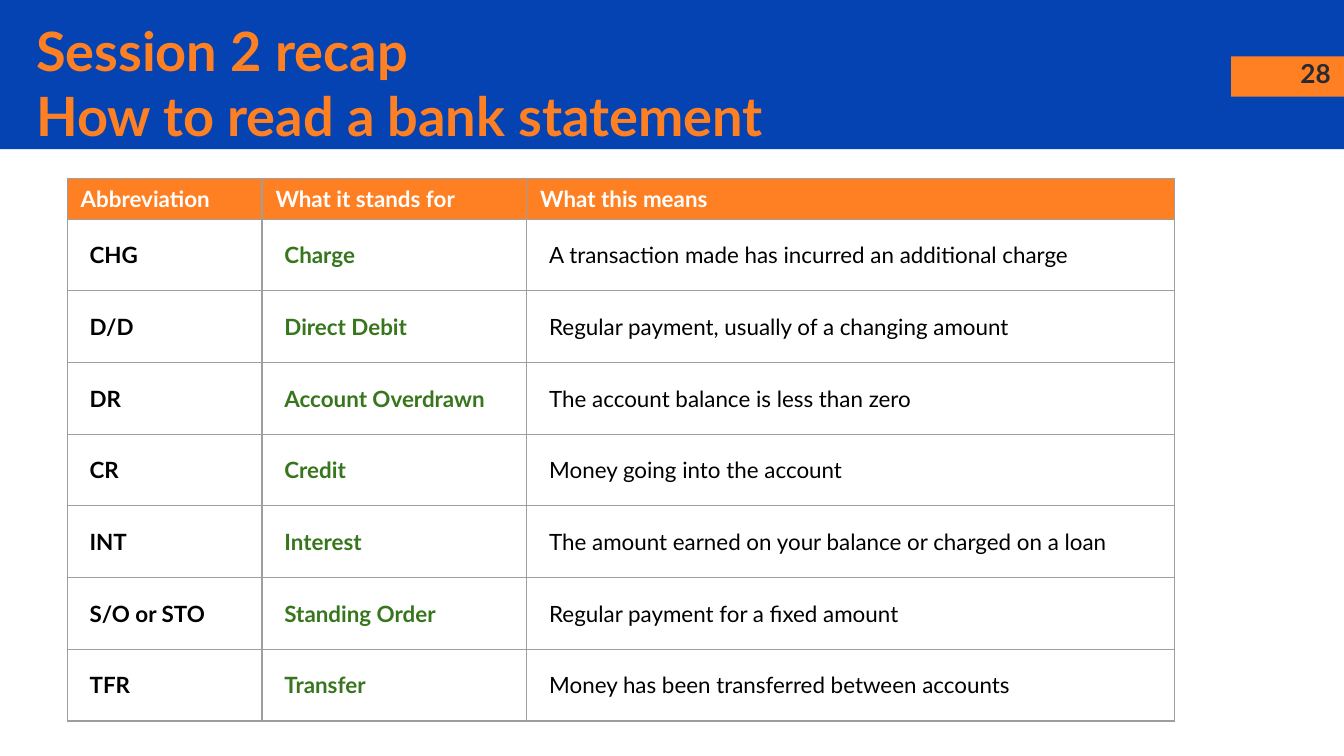
from typing import NamedTuple

from lxml import etree
from pptx import Presentation
from pptx.dml.color import RGBColor
from pptx.enum import shapes, text
from pptx.oxml import ns
from pptx.util import Inches, Pt

FONT = "Lato"
BLUE, ORANGE, GREEN = "0543B3", "FF8022", "38761D"
WHITE, BLACK, DARK, GREY = "FFFFFF", "000000", "262A33", "9E9E9E"


class Term(NamedTuple):
    abbreviation: str
    stands_for: str
    meaning: str


class CellStyle(NamedTuple):
    color: str
    bold: bool
    margins: tuple[float, float]  # horizontal, vertical
    fill: str | None = None


HEADINGS = Term("Abbreviation", "What it stands for", "What this means")
TERMS = [
    Term("CHG", "Charge", "A transaction made has incurred an additional charge"),
    Term("D/D", "Direct Debit", "Regular payment, usually of a changing amount"),
    Term("DR", "Account Overdrawn", "The account balance is less than zero"),
    Term("CR", "Credit", "Money going into the account"),
    Term("INT", "Interest", "The amount earned on your balance or charged on a loan"),
    Term("S/O or STO", "Standing Order", "Regular payment for a fixed amount"),
    Term("TFR", "Transfer", "Money has been transferred between accounts"),
]
COLUMN_WIDTHS = [1.45, 1.97, 4.82]
HEADER_HEIGHT, TERM_HEIGHT = 0.3, 0.53

HEADER_STYLE = CellStyle(WHITE, True, (0.1, 0.05), ORANGE)
TERM_MARGINS = (1 / 6, 1 / 6)
TERM_STYLES = [
    CellStyle(BLACK, True, TERM_MARGINS),
    CellStyle(GREEN, True, TERM_MARGINS),
    CellStyle(BLACK, False, TERM_MARGINS),
]


def rgb(color: str) -> RGBColor:
    return RGBColor.from_string(color)


def style_font(paragraph, size: float, color: str, bold: bool) -> None:
    font = paragraph.font
    font.name, font.size, font.bold = FONT, Pt(size), bold
    font.color.rgb = rgb(color)


def add_band(slide, left: float, top: float, width: float, height: float, color: str) -> None:
    band = slide.shapes.add_shape(
        shapes.MSO_SHAPE.RECTANGLE, Inches(left), Inches(top), Inches(width), Inches(height))
    band.shadow.inherit = False
    band.fill.solid()
    band.fill.fore_color.rgb = rgb(color)
    band.line.fill.background()


def add_text(slide, box: tuple[float, float, float, float], lines: list[str], size: float,
             color: str, align, anchor, vertical_margin: float) -> None:
    frame = slide.shapes.add_textbox(*map(Inches, box)).text_frame
    frame.word_wrap = True
    frame.vertical_anchor = anchor
    frame.margin_left = frame.margin_right = Inches(0.1)
    frame.margin_top = frame.margin_bottom = Inches(vertical_margin)
    frame.text = "\n".join(lines)
    for paragraph in frame.paragraphs:
        paragraph.alignment = align
        style_font(paragraph, size, color, True)


def add_borders(cell) -> None:
    properties = cell._tc.get_or_add_tcPr()
    for position, side in enumerate(("a:lnL", "a:lnR", "a:lnT", "a:lnB")):
        line = etree.Element(ns.qn(side), w=str(Pt(0.75)))
        fill = etree.SubElement(line, ns.qn("a:solidFill"))
        etree.SubElement(fill, ns.qn("a:srgbClr"), val=GREY)
        properties.insert(position, line)


def fill_cell(cell, wording: str, style: CellStyle) -> None:
    horizontal, vertical = map(Inches, style.margins)
    cell.margin_left = cell.margin_right = horizontal
    cell.margin_top = cell.margin_bottom = vertical
    cell.text = wording
    style_font(cell.text_frame.paragraphs[0], 12, style.color, style.bold)
    if style.fill:
        cell.fill.solid()
        cell.fill.fore_color.rgb = rgb(style.fill)
    else:
        cell.fill.background()
    add_borders(cell)


def add_glossary(slide, left: float, top: float) -> None:
    heights = [HEADER_HEIGHT] + [TERM_HEIGHT] * len(TERMS)
    table = slide.shapes.add_table(
        len(heights), len(COLUMN_WIDTHS), Inches(left), Inches(top),
        Inches(sum(COLUMN_WIDTHS)), Inches(sum(heights))).table
    table.horz_banding = False
    for column, width in zip(table.columns, COLUMN_WIDTHS):
        column.width = Inches(width)
    for row, height, term in zip(table.rows, heights, [HEADINGS, *TERMS]):
        row.height = Inches(height)
        styles = [HEADER_STYLE] * len(term) if term is HEADINGS else TERM_STYLES
        for cell, wording, style in zip(row.cells, term, styles):
            fill_cell(cell, wording, style)


def main() -> None:
    deck = Presentation()
    deck.slide_width, deck.slide_height = Inches(10), Inches(10 * 9 / 16)
    slide = deck.slides.add_slide(deck.slide_layouts[6])

    # Header band and page number
    add_band(slide, 0, 0, 10, 1.11, BLUE)
    add_band(slide, 9.16, 0.42, 0.84, 0.3, ORANGE)
    add_text(slide, (9.4, 0.33, 0.6, 0.43), ["28"], 14, DARK,
             text.PP_ALIGN.RIGHT, text.MSO_ANCHOR.TOP, 0.1)

    # Table of statement abbreviations
    add_glossary(slide, 0.5, 1.33)

    # Title
    add_text(slide, (0.17, 0.12, 8.85, 0.99), ["Session 2 recap", "How to read a bank statement"],
             29, ORANGE, text.PP_ALIGN.LEFT, text.MSO_ANCHOR.MIDDLE, 0)

    deck.save("out.pptx")


if __name__ == "__main__":
    main()
